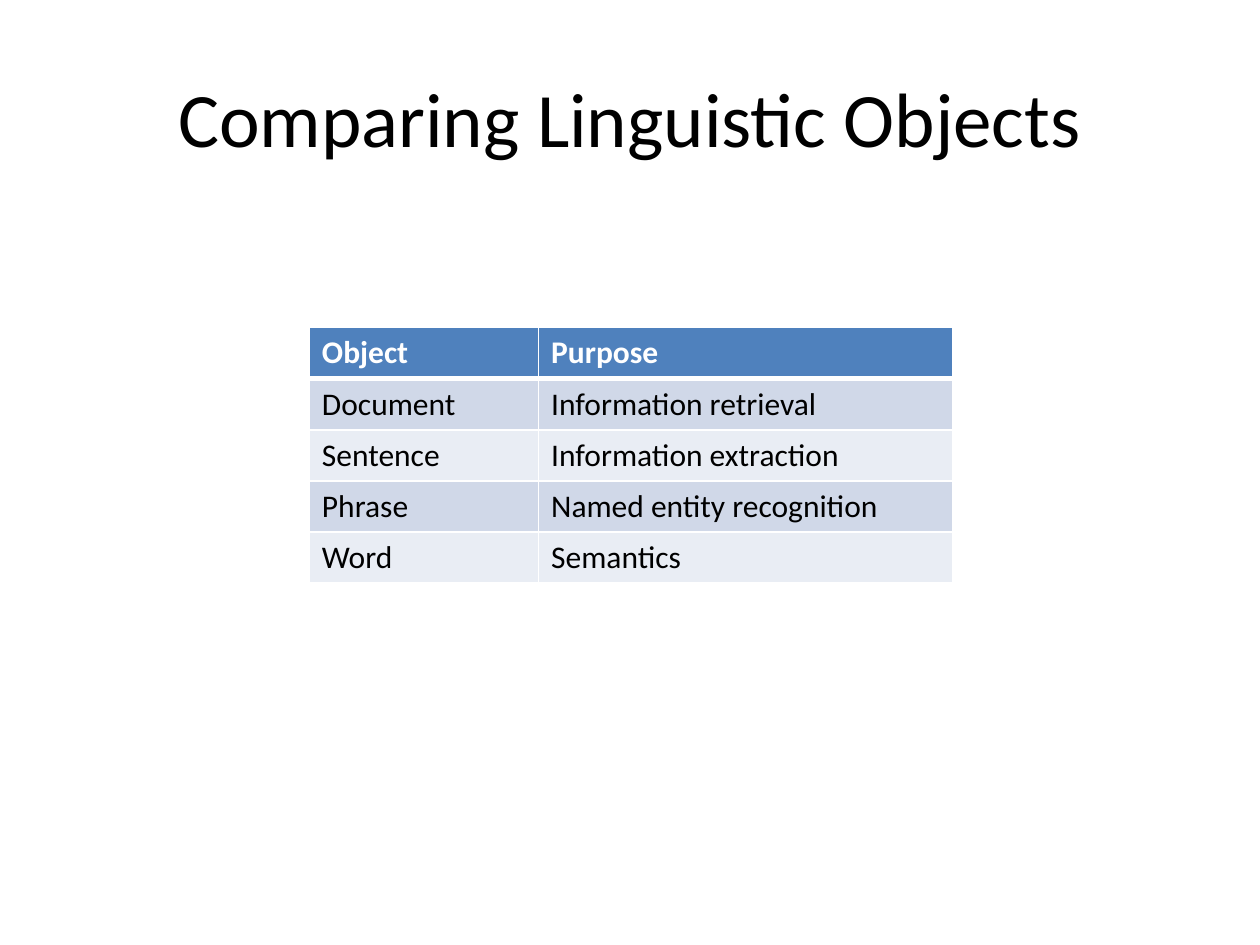
from lxml.etree import SubElement
from pptx import Presentation
from pptx.dml.color import RGBColor
from pptx.enum.text import MSO_ANCHOR as Anchor, PP_ALIGN as Align
from pptx.oxml.ns import qn
from pptx.util import Pt

BLACK = RGBColor(0x00, 0x00, 0x00)
WHITE = RGBColor(0xFF, 0xFF, 0xFF)
HEADER_BLUE = RGBColor(0x4F, 0x81, 0xBD)
BAND_DARK = RGBColor(0xD0, 0xD8, 0xE8)
BAND_LIGHT = RGBColor(0xE9, 0xED, 0xF4)

FONT = "Calibri"
COLUMN_WIDTHS = (131, 236.5)
ROW_HEIGHT = 29.2
ROWS = (
    ("Object", "Purpose"),
    ("Document", "Information retrieval"),
    ("Sentence", "Information extraction"),
    ("Phrase", "Named entity recognition"),
    ("Word", "Semantics"),
)


def write_text(frame, text, size=18, color=BLACK, bold=False, align=Align.LEFT):
    para = frame.paragraphs[0]
    para.alignment = align
    span = para.add_run()
    span.text = text
    span.font.name = FONT
    span.font.size = Pt(size)
    span.font.bold = bold
    span.font.color.rgb = color


def add_title(page, text):
    box = page.shapes.title
    box.left, box.top, box.width, box.height = Pt(36), Pt(21.6), Pt(648), Pt(90)
    box.text_frame.vertical_anchor = Anchor.MIDDLE
    write_text(box.text_frame, text, size=44, align=Align.CENTER)


def set_borders(cell, top=1, bottom=1):
    properties = cell._tc.get_or_add_tcPr()
    widths = {"a:lnL": 1, "a:lnR": 1, "a:lnT": top, "a:lnB": bottom}
    for tag, width in widths.items():
        line = SubElement(properties, qn(tag), w=str(Pt(width)))
        fill = SubElement(line, qn("a:solidFill"))
        SubElement(fill, qn("a:srgbClr"), val=str(WHITE))


def format_cell(cell, text, row):
    header = row == 0
    set_borders(cell, top=3 if row == 1 else 1, bottom=3 if header else 1)
    cell.fill.solid()
    band = BAND_DARK if row % 2 else BAND_LIGHT
    cell.fill.fore_color.rgb = HEADER_BLUE if header else band
    write_text(cell.text_frame, text, color=WHITE if header else BLACK, bold=header)


def add_purpose_table(page):
    table = page.shapes.add_table(
        len(ROWS), len(COLUMN_WIDTHS), Pt(176.8), Pt(187.2),
        Pt(sum(COLUMN_WIDTHS)), Pt(ROW_HEIGHT * len(ROWS)),
    ).table
    for column, width in zip(table.columns, COLUMN_WIDTHS):
        column.width = Pt(width)
    for row, texts in enumerate(ROWS):
        table.rows[row].height = Pt(ROW_HEIGHT)
        for column, text in enumerate(texts):
            format_cell(table.cell(row, column), text, row)


def main():
    deck = Presentation()
    deck.slide_width, deck.slide_height = Pt(720), Pt(540)
    page = deck.slides.add_slide(deck.slide_layouts[5])
    add_title(page, "Comparing Linguistic Objects")
    add_purpose_table(page)
    deck.save("out.pptx")


if __name__ == "__main__":
    main()
